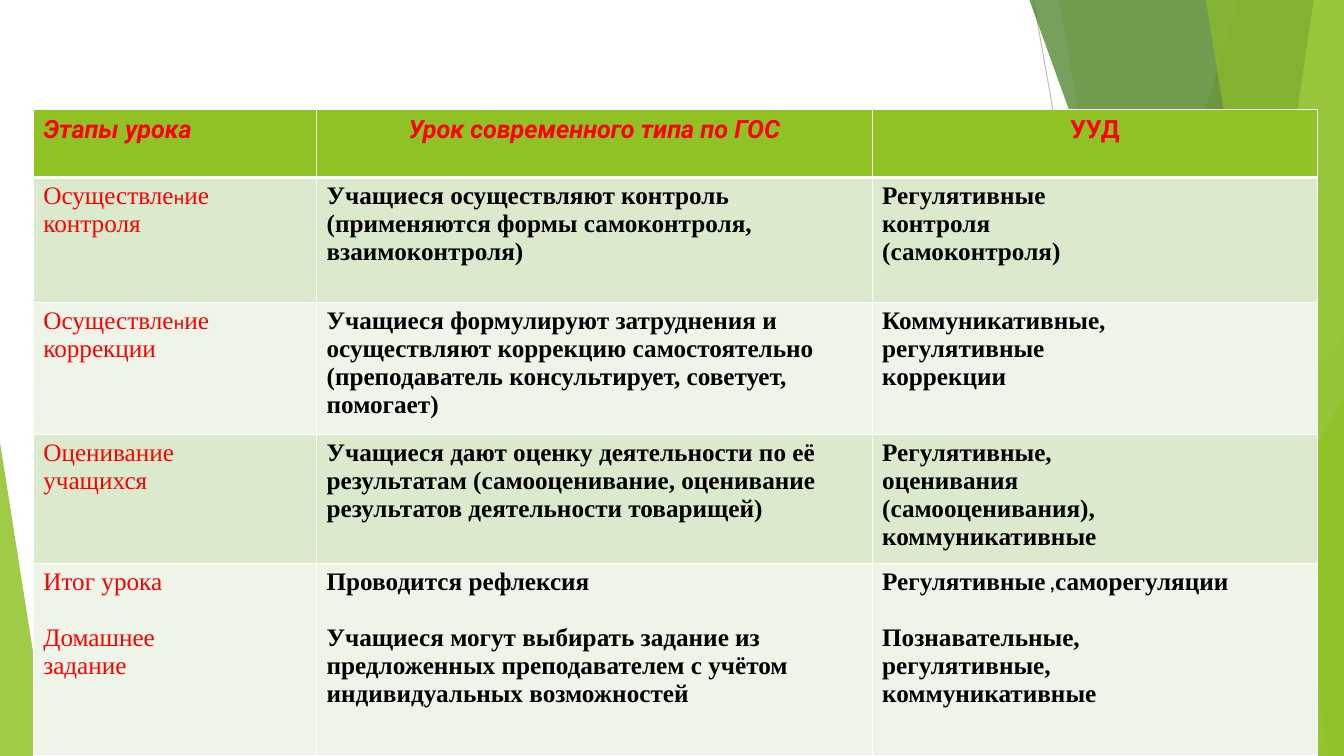
from pptx import Presentation
from pptx.dml.color import RGBColor
from pptx.enum.shapes import MSO_CONNECTOR, MSO_SHAPE
from pptx.enum.text import PP_ALIGN
from pptx.oxml.ns import qn
from pptx.util import Inches, Pt
from lxml import etree

STRAIGHT = MSO_CONNECTOR.STRAIGHT
TRIANGLE = MSO_SHAPE.ISOSCELES_TRIANGLE
LEFT, CENTER = PP_ALIGN.LEFT, PP_ALIGN.CENTER

COLORS = {
    "lime": "90C226", "pale lime": "C0E474", "green": "54A021", "dark green": "3F7819",
    "gray": "BFBFBF", "light gray": "D9D9D9", "white": "FFFFFF", "red": "FF0000",
    "black": "000000", "band": "DBE9CD", "light band": "EEF4E8",
}
W, H = 13.33, 7.5

# Each cell is a list of paragraphs; GAP opens a space above the next one.
# Pieces between bars alternate between the main font and the small one.
GAP = None
HEADER = ["Этапы урока", "Урок современного типа по ГОС", "УУД"]
STAGES = [
    (["Осуществле|н|ие| |контроля"],
     ["Учащиеся осуществляют контроль (применяются формы самоконтроля, взаимоконтроля)"],
     ["Регулятивные", "контроля", "(самоконтроля)"]),
    (["Осуществле|н|ие| |коррекции"],
     ["Учащиеся формулируют затруднения и осуществляют коррекцию самостоятельно "
      "(преподаватель консультирует, советует, помогает)"],
     ["Коммуникативные,", "регулятивные", "коррекции"]),
    (["Оценивание", "учащихся"],
     ["Учащиеся дают оценку деятельности по её результатам (самооценивание, оценивание "
      "результатов деятельности товарищей)"],
     ["Регулятивные,", "оценивания", "(самооценивания),", "коммуникативные"]),
    (["Итог урока", GAP, "Домашнее", "задание"],
     ["Проводится рефлексия", GAP,
      "Учащиеся могут выбирать задание из предложенных преподавателем с учётом "
      "индивидуальных возможностей"],
     ["Регулятивные| ,|саморегуляции", GAP, "Познавательные,", "регулятивные,",
      "коммуникативные"]),
]
TABLE_LEFT, TABLE_TOP = 0.33, 1.09
COL_WIDTHS = [2.81, 5.51, 4.42]
ROW_HEIGHTS = [0.67, 1.24, 1.31, 1.28, 1.91]

# Facets from back to front
RAYS = [((10.25, 0), (11.58, H), "gray"), ((W, 4.03), (8.12, H), "light gray")]
# ("band", top x, bottom x) runs to the right edge; ("triangle", box, apex)
FACETS = [
    ("band", (12.28, 10.04), "lime", 30),
    ("band", (10.5, 11.83), "lime", 20),
    ("triangle", (9.77, 3.33, 3.56, 4.17, 1), "green", 72),
    ("band", (10.21, 12.91), "dark green", 70),
    ("band", (13.03, 11.92), "pale lime", 70),
    ("band", (11.96, 13.18), "lime", 65),
    ("triangle", (11.34, 3.93, 1.99, 3.57, 1), "lime", 80),
    ("triangle", (0, 4.39, 0.49, 3.11, 0), "lime", 85),
]


def rgb(name):
    return RGBColor.from_string(COLORS[name])


def add_ray(s, start, end, color):
    ray = s.shapes.add_connector(STRAIGHT, *map(Inches, start + end))
    ray.line.color.rgb = rgb(color)
    ray.line.width = Pt(0.75)
    etree.SubElement(ray._element.spPr, qn("a:effectLst"))


def add_facet(s, kind, geometry, color, opacity):
    if kind == "band":
        top, bottom = geometry
        builder = s.shapes.build_freeform(Inches(top), 0)
        corners = [(W, 0), (W, H), (bottom, H)]
        builder.add_line_segments([(Inches(x), Inches(y)) for x, y in corners])
        sp = builder.convert_to_shape()
    else:
        sp = s.shapes.add_shape(TRIANGLE, *map(Inches, geometry[:4]))
        sp.adjustments[0] = geometry[4]
    sp.shadow.inherit = False
    sp.line.fill.background()
    sp.fill.solid()
    sp.fill.fore_color.rgb = rgb(color)
    clr = sp._element.spPr.find(qn("a:solidFill"))[0]
    etree.SubElement(clr, qn("a:alpha"), val=str(opacity * 1000))


def set_borders(cell, bottom=1):
    tc_pr = cell._tc.get_or_add_tcPr()
    for i, (side, width) in enumerate([("L", 1), ("R", 1), ("T", 1), ("B", bottom)]):
        ln = etree.Element(qn("a:ln" + side), w=str(Pt(width)))
        fill = etree.SubElement(ln, qn("a:solidFill"))
        etree.SubElement(fill, qn("a:srgbClr"), val=COLORS["white"])
        tc_pr.insert(i, ln)


def fill_cell(cell, paragraphs, fill, color, font, bold, italic=False, align=LEFT, bottom=1):
    cell.fill.solid()
    cell.fill.fore_color.rgb = rgb(fill)
    set_borders(cell, bottom)
    tf = cell.text_frame
    p, gap = tf.paragraphs[0], False
    for i, text in enumerate(paragraphs):
        if text is GAP:
            gap = True
            continue
        if i:
            p = tf.add_paragraph()
        p.alignment = align
        if gap:
            p.space_before, gap = Pt(20), False
        for j, piece in enumerate(text.split("|")):
            r = p.add_run()
            r.text = piece
            r.font.name, r.font.size = ("Calibri", Pt(14)) if j % 2 else (font, Pt(18))
            r.font.bold, r.font.italic = bold, italic
            r.font.color.rgb = rgb(color)


def add_stage_table(s):
    table = s.shapes.add_table(
        len(ROW_HEIGHTS), len(COL_WIDTHS), Inches(TABLE_LEFT), Inches(TABLE_TOP),
        Inches(sum(COL_WIDTHS)), Inches(sum(ROW_HEIGHTS))).table
    for column, width in zip(table.columns, COL_WIDTHS):
        column.width = Inches(width)
    for row, height in zip(table.rows, ROW_HEIGHTS):
        row.height = Inches(height)
    last = len(HEADER) - 1
    for c, title in enumerate(HEADER):
        fill_cell(table.cell(0, c), [title], "lime", "red", "Roboto", True,
                  italic=c < last, align=CENTER if c else LEFT, bottom=3)
    for r, stage in enumerate(STAGES, 1):
        fill = "band" if r % 2 else "light band"
        for c, paragraphs in enumerate(stage):
            fill_cell(table.cell(r, c), paragraphs, fill, "black" if c else "red",
                      "Times New Roman", c > 0)


def main():
    prs = Presentation()
    prs.slide_width, prs.slide_height = Inches(W), Inches(H)
    s = prs.slides.add_slide(prs.slide_layouts[6])
    for ray in RAYS:
        add_ray(s, *ray)
    for facet in FACETS:
        add_facet(s, *facet)
    add_stage_table(s)
    prs.save("out.pptx")


if __name__ == "__main__":
    main()
